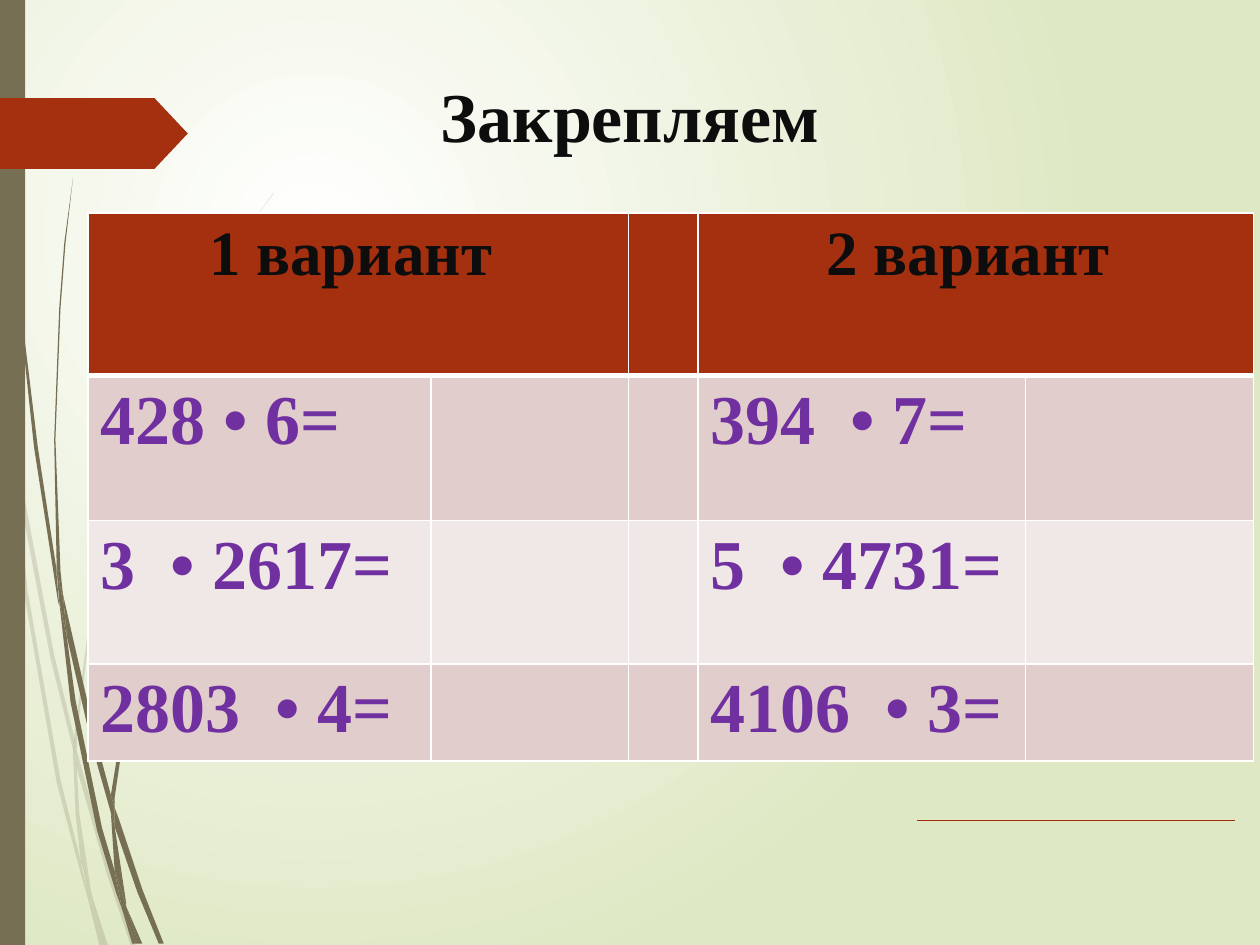
from lxml.etree import SubElement
from pptx import Presentation
from pptx.dml.color import RGBColor
from pptx.enum.shapes import MSO_CONNECTOR, MSO_SHAPE
from pptx.enum.text import MSO_ANCHOR, PP_ALIGN
from pptx.oxml.ns import qn
from pptx.util import Inches, Pt

FONT = "Times New Roman"
WHITE = RGBColor(0xFF, 0xFF, 0xFF)
PALE_GREEN = RGBColor(0xDF, 0xE8, 0xC4)
OLIVE = RGBColor(0x76, 0x6F, 0x54)
RUST = RGBColor(0xA5, 0x30, 0x10)
DARK_RUST = RGBColor(0x9E, 0x2E, 0x0F)
INK = RGBColor(0x0D, 0x0D, 0x0D)
PURPLE = RGBColor(0x70, 0x30, 0xA0)
BANDS = (RGBColor(0xE1, 0xCD, 0xCC), RGBColor(0xF0, 0xE8, 0xE7))

UNIT = Inches(0.01)
PALE_STEMS = [
    [(8, 350), (6, 322), (0, 282), (0, 299), (7, 344)],
    [(40, 522), (59, 599), (59, 586), (43, 520), (10, 345), (12, 376)],
    [(64, 607), (61, 596), (61, 610), (85, 694), (104, 751), (108, 751), (88, 692)],
    [(83, 751), (86, 751), (73, 711)],
    [(64, 683), (48, 619), (22, 469), (12, 376), (8, 350), (19, 470), (45, 621),
     (64, 693), (70, 714), (69, 707)],
    [(58, 599), (60, 646), (64, 683), (67, 692), (73, 711), (72, 706), (63, 646),
     (61, 610), (61, 608)],
    [(61, 584), (76, 462), (111, 349), (159, 245), (187, 198), (201, 175), (217, 154),
     (217, 153), (201, 175), (186, 197), (158, 244), (110, 348), (75, 461), (59, 584),
     (59, 586), (61, 596)],
    [(70, 714), (79, 751), (82, 751)],
    [(61, 608), (61, 610), (61, 596), (59, 586), (58, 599)],
    [(67, 692), (65, 683), (69, 707), (70, 714), (82, 751), (83, 751), (73, 711)],
]
DARK_STEMS = [
    [(5, 110), (14, 233), (27, 355), (46, 477), (47, 481), (45, 457), (45, 453),
     (30, 355), (15, 232), (6, 109), (4, 48), (3, 0), (2, 0), (3, 48)],
    [(73, 592), (88, 645), (88, 633), (88, 631), (77, 590), (50, 472), (53, 505)],
    [(94, 649), (91, 641), (91, 656), (109, 708), (126, 749), (130, 749), (113, 706)],
    [(91, 691), (81, 657), (60, 556), (53, 505), (47, 477), (56, 557), (77, 659),
     (92, 708), (97, 722), (96, 717)],
    [(50, 472), (48, 453), (44, 349), (48, 245), (52, 193), (58, 141), (51, 193),
     (47, 245), (43, 349), (45, 449), (49, 472)],
    [(110, 749), (113, 749), (100, 719)],
    [(47, 477), (53, 505), (50, 472), (49, 472), (45, 449), (45, 453)],
    [(91, 633), (103, 552), (131, 476), (169, 406), (191, 374), (203, 359), (216, 344),
     (215, 344), (203, 358), (191, 373), (168, 405), (129, 474), (101, 551), (88, 631),
     (91, 641)],
    [(97, 722), (105, 749), (108, 749)],
    [(88, 645), (91, 691), (96, 706), (100, 719), (100, 716), (91, 656), (90, 651)],
    [(88, 645), (90, 651), (91, 656), (91, 641), (88, 631), (88, 633)],
    [(96, 706), (91, 691), (96, 717), (97, 722), (108, 749), (110, 749), (100, 719)],
]

COLUMNS = (2.72, 1.57, 0.55, 2.6, 1.81)
ROWS = (1.29, 1.15, 1.14, 0.77)
VARIANTS = {
    0: ("1 вариант ", "428 • 6=", "3  • 2617=", "2803  • 4="),
    3: ("2 вариант ", "394  • 7=", "5  • 4731=", "4106  • 3="),
}


def set_background(s):
    """Fill the slide with a circular gradient."""
    fill = s.background.fill
    fill.gradient()
    for stop, color, position in zip(fill.gradient_stops, (WHITE, PALE_GREEN), (0, 1)):
        stop.color.rgb = color
        stop.position = position
    grad = s.element.find(".//" + qn("a:gradFill"))
    grad.remove(grad.find(qn("a:lin")))
    circle = SubElement(grad, qn("a:path"), path="circle")
    SubElement(circle, qn("a:fillToRect"), l="50000", t="50000", r="100000", b="100000")


def paint(sp, color, alpha=None):
    """Give a shape a plain fill with no line or shadow."""
    sp.shadow.inherit = False
    sp.fill.solid()
    sp.fill.fore_color.rgb = color
    sp.line.fill.background()
    if alpha is not None:
        rgb = sp.fill._xPr.find(".//" + qn("a:srgbClr"))
        SubElement(rgb, qn("a:alpha"), val=str(alpha * 1000))


def add_stems(s, outlines, alpha=None):
    """Draw grass stems from outlines in hundredths of an inch."""
    for start, *rest in outlines:
        builder = s.shapes.build_freeform(*start, scale=UNIT)
        builder.add_line_segments(rest, close=True)
        paint(builder.convert_to_shape(), OLIVE, alpha)


def add_block(s, kind, left, top, width, height, color):
    """Add a plain preset shape."""
    sp = s.shapes.add_shape(kind, Inches(left), Inches(top), Inches(width), Inches(height))
    paint(sp, color)
    return sp


def add_rule(s, x1, x2, y):
    """Add a thin horizontal line."""
    line = s.shapes.add_connector(
        MSO_CONNECTOR.STRAIGHT, Inches(x1), Inches(y), Inches(x2), Inches(y))
    line.line.color.rgb = DARK_RUST
    line.line.width = Pt(0.75)
    SubElement(line._element.spPr, qn("a:effectLst"))


def style_text(p, size, color, align):
    """Set bold text formatting on a paragraph."""
    p.alignment = align
    p.font.name = FONT
    p.font.size = Pt(size)
    p.font.bold = True
    p.font.color.rgb = color


def set_title(s, text):
    """Place and format the title."""
    sp = s.shapes.title
    sp.left, sp.top, sp.width, sp.height = map(Inches, (2.5, 0.52, 5, 0.77))
    tf = sp.text_frame
    tf.text = text
    tf.vertical_anchor = MSO_ANCHOR.MIDDLE
    style_text(tf.paragraphs[0], 40, INK, PP_ALIGN.CENTER)


def style_cell(cell, color, widths):
    """Set a cell's white borders and its fill."""
    tc_pr = cell._tc.get_or_add_tcPr()
    for side, width in widths.items():
        ln = SubElement(tc_pr, qn("a:ln" + side), w=str(Pt(width)))
        solid = SubElement(ln, qn("a:solidFill"))
        SubElement(solid, qn("a:srgbClr"), val=str(WHITE))
    cell.fill.solid()
    cell.fill.fore_color.rgb = color


def add_exercises(s):
    """Add the table with the two variants of exercises."""
    table = s.shapes.add_table(
        len(ROWS), len(COLUMNS), Inches(0.7), Inches(1.69),
        Inches(sum(COLUMNS)), Inches(sum(ROWS))).table
    for column, width in zip(table.columns, COLUMNS):
        column.width = Inches(width)
    for i, (row, height) in enumerate(zip(table.rows, ROWS)):
        row.height = Inches(height)
        color = BANDS[(i - 1) % 2] if i else RUST
        widths = {"L": 1, "R": 1, "T": 3 if i == 1 else 1, "B": 1 if i else 3}
        for cell in row.cells:
            style_cell(cell, color, widths)
    for j, texts in VARIANTS.items():
        table.cell(0, j).merge(table.cell(0, j + 1))
        for i, text in enumerate(texts):
            tf = table.cell(i, j).text_frame
            tf.text = text
            look = (40, PURPLE, PP_ALIGN.LEFT) if i else (36, INK, PP_ALIGN.CENTER)
            style_text(tf.paragraphs[0], *look)


def main():
    """Build the slide and save it."""
    prs = Presentation()
    prs.slide_width, prs.slide_height = Inches(10), Inches(7.5)
    s = prs.slides.add_slide(prs.slide_layouts[5])
    set_background(s)
    add_stems(s, PALE_STEMS, alpha=20)
    add_stems(s, DARK_STEMS)
    add_block(s, MSO_SHAPE.RECTANGLE, 0, 0, 0.2, 7.5, OLIVE)
    arrow = add_block(s, MSO_SHAPE.PENTAGON, 0, 0.78, 1.49, 0.56, RUST)
    arrow.adjustments[0] = 0.47
    add_rule(s, 7.28, 9.8, 6.51)
    set_title(s, "Закрепляем")
    add_exercises(s)
    prs.save("out.pptx")


if __name__ == "__main__":
    main()
